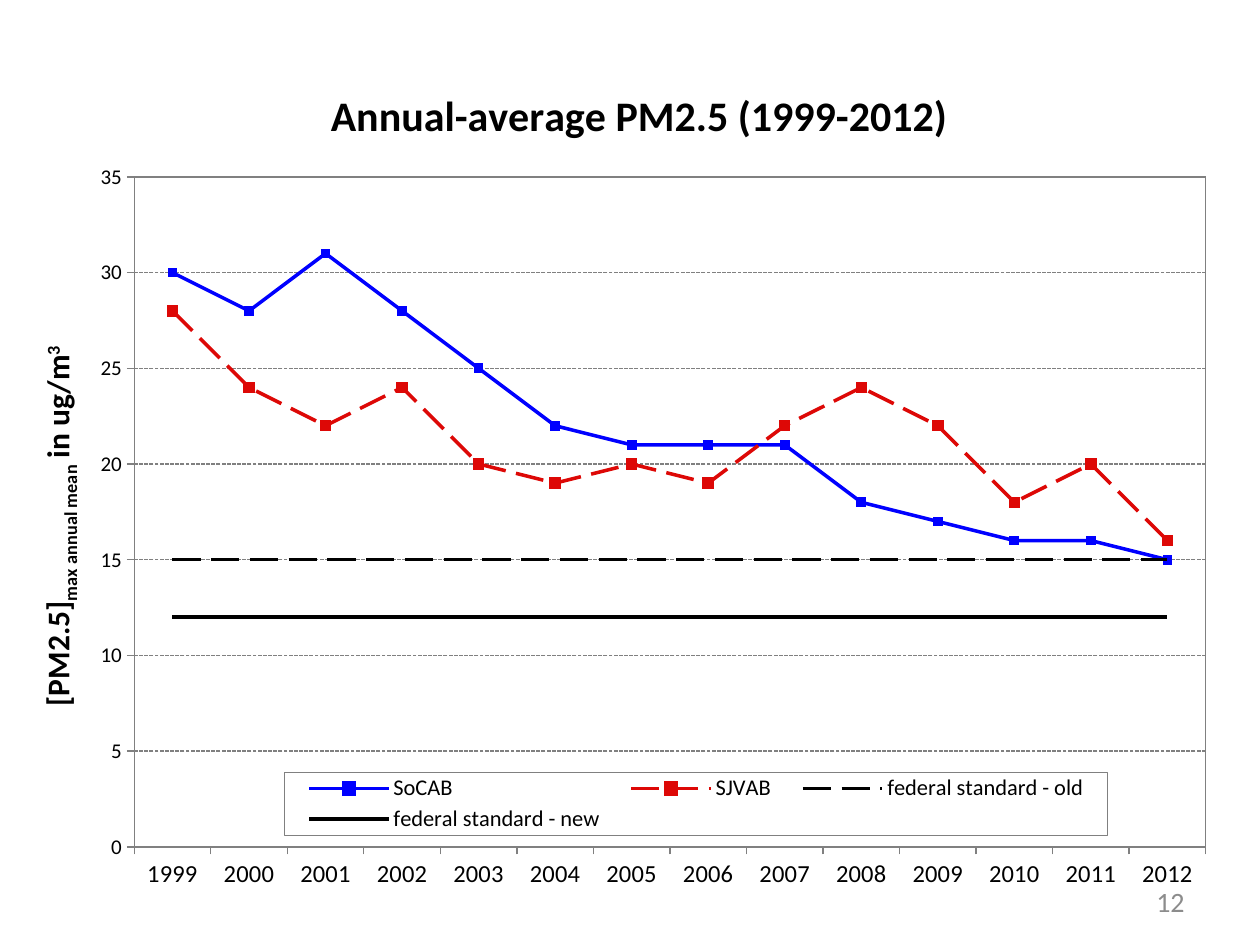
from dataclasses import dataclass
from typing import Optional

from lxml.etree import SubElement
from pptx import Presentation
from pptx.chart.data import CategoryChartData
from pptx.dml.color import RGBColor
from pptx.enum.chart import XL_CHART_TYPE, XL_LEGEND_POSITION, XL_MARKER_STYLE, XL_TICK_MARK
from pptx.enum.dml import MSO_LINE
from pptx.enum.text import MSO_ANCHOR, PP_ALIGN
from pptx.oxml.ns import qn
from pptx.util import Pt

FONT = "Calibri"
BLACK = "000000"
GRAY = "808080"
CHART_WIDTH = 681.84
CHART_HEIGHT = 495.36


@dataclass
class Trend:
    name: str
    values: list[int]
    color: str
    dash: MSO_LINE = MSO_LINE.SOLID
    marker_size: Optional[int] = None


YEARS = range(1999, 2013)
TRENDS = [
    Trend("SoCAB", [30, 28, 31, 28, 25, 22, 21, 21, 21, 18, 17, 16, 16, 15], "0000FF", marker_size=5),
    Trend("SJVAB", [28, 24, 22, 24, 20, 19, 20, 19, 22, 24, 22, 18, 20, 16],
          "DD0806", MSO_LINE.LONG_DASH, 6),
    Trend("federal standard - old", [15] * len(YEARS), BLACK, MSO_LINE.LONG_DASH),
    Trend("federal standard - new", [12] * len(YEARS), BLACK),
]


def rgb(color: str) -> RGBColor:
    return RGBColor.from_string(color)


def style_font(font, size: float, color: str = BLACK, bold: bool = False) -> None:
    font.name = FONT
    font.size = Pt(size)
    font.bold = bold
    font.color.rgb = rgb(color)


def style_line(line, color: str, width: float, dash: MSO_LINE = MSO_LINE.SOLID) -> None:
    line.color.rgb = rgb(color)
    line.width = Pt(width)
    line.dash_style = dash


def place(element, inner: bool = False, **points: float) -> None:
    layout = element.find(qn("c:layout"))
    if layout is not None:
        element.remove(layout)
    overlay = element.find(qn("c:overlay"))
    layout = element.makeelement(qn("c:layout"))
    element.insert(0 if overlay is None else element.index(overlay), layout)
    manual = SubElement(layout, qn("c:manualLayout"))
    if inner:
        SubElement(manual, qn("c:layoutTarget")).set("val", "inner")
    for side in ("x", "y"):
        SubElement(manual, qn(f"c:{side}Mode")).set("val", "edge")
    for side, length in points.items():
        extent = CHART_WIDTH if side in ("x", "w") else CHART_HEIGHT
        SubElement(manual, qn(f"c:{side}")).set("val", str(length / extent))


def add_shape_properties(element, fill: Optional[str], following: tuple[str, ...] = ()) -> None:
    properties = element.makeelement(qn("c:spPr"))
    follower = next((child for child in element if child.tag in map(qn, following)), None)
    element.insert(len(element) if follower is None else element.index(follower), properties)
    if fill:
        solid = SubElement(properties, qn("a:solidFill"))
        SubElement(solid, qn("a:srgbClr")).set("val", fill)
    else:
        SubElement(properties, qn("a:noFill"))
    outline = SubElement(properties, qn("a:ln"), w=str(Pt(0.75)))
    solid = SubElement(outline, qn("a:solidFill"))
    SubElement(solid, qn("a:srgbClr")).set("val", GRAY)


def style_axes(chart) -> None:
    for axis, size in ((chart.category_axis, 14), (chart.value_axis, 12)):
        style_font(axis.tick_labels.font, size)
        style_line(axis.format.line, GRAY, 0.75)
        axis.major_tick_mark = XL_TICK_MARK.OUTSIDE
    axis = chart.value_axis
    axis.minimum_scale, axis.maximum_scale, axis.major_unit = 0, 35, 5
    axis.tick_labels.number_format = "#,##0"
    axis.tick_labels.number_format_is_linked = False
    style_line(axis.major_gridlines.format.line, GRAY, 0.75, MSO_LINE.SQUARE_DOT)

    paragraph = axis.axis_title.text_frame.paragraphs[0]
    for text, baseline in (("[PM2.5]", 0), ("max annual mean", -25000), (" in ug/m", 0), ("3", 30000)):
        run = paragraph.add_run()
        run.text = text
        style_font(run.font, 18, bold=True)
        run.font._element.set("baseline", str(baseline))
    place(axis.axis_title._element, x=0, y=173.2)


def style_trend(series, trend: Trend) -> None:
    series.smooth = False
    style_line(series.format.line, trend.color, 2, trend.dash)
    if trend.marker_size is None:
        series.marker.style = XL_MARKER_STYLE.NONE
        return
    series.marker.style = XL_MARKER_STYLE.SQUARE
    series.marker.size = trend.marker_size
    series.marker.format.fill.solid()
    series.marker.format.fill.fore_color.rgb = rgb(trend.color)
    style_line(series.marker.format.line, trend.color, 0.75)


def add_trend_chart(slide) -> None:
    data = CategoryChartData(number_format="0")
    data.categories = [str(year) for year in YEARS]
    for trend in TRENDS:
        data.add_series(trend.name, trend.values)
    chart = slide.shapes.add_chart(
        XL_CHART_TYPE.LINE_MARKERS, Pt(18.72), Pt(22.32), Pt(CHART_WIDTH), Pt(CHART_HEIGHT), data
    ).chart
    style_font(chart.font, 10)
    chart.plots[0].vary_by_categories = False
    for series, trend in zip(chart.plots[0].series, TRENDS):
        style_trend(series, trend)
    style_axes(chart)

    paragraph = chart.chart_title.text_frame.paragraphs[0]
    paragraph.text = "Annual-average PM2.5 (1999-2012)"
    style_font(paragraph.font, 24, bold=True)
    place(chart.chart_title._element, x=166, y=23)

    plot_area = chart._chartSpace.chart.plotArea
    place(plot_area, inner=True, x=58, y=78.8, w=612.3, h=382.9)
    add_shape_properties(plot_area, None)

    chart.has_legend = True
    legend = chart.legend
    legend.position = XL_LEGEND_POSITION.RIGHT
    legend.include_in_layout = False
    style_font(legend.font, 12.8)
    place(legend._element, x=143.8, y=419, w=470.5, h=36.2)
    add_shape_properties(legend._element, "FFFFFF", ("c:txPr",))


def add_slide_number(slide) -> None:
    text_frame = slide.shapes.add_textbox(Pt(516), Pt(500.4), Pt(168), Pt(28.8)).text_frame
    text_frame.word_wrap = True
    text_frame.vertical_anchor = MSO_ANCHOR.MIDDLE
    paragraph = text_frame.paragraphs[0]
    paragraph.text = "12"
    paragraph.alignment = PP_ALIGN.RIGHT
    style_font(paragraph.font, 16, "8C8C8C")


def main() -> None:
    presentation = Presentation()
    presentation.slide_width, presentation.slide_height = Pt(720), Pt(540)
    slide = presentation.slides.add_slide(presentation.slide_layouts[6])
    add_trend_chart(slide)
    add_slide_number(slide)
    presentation.save("out.pptx")


if __name__ == "__main__":
    main()
